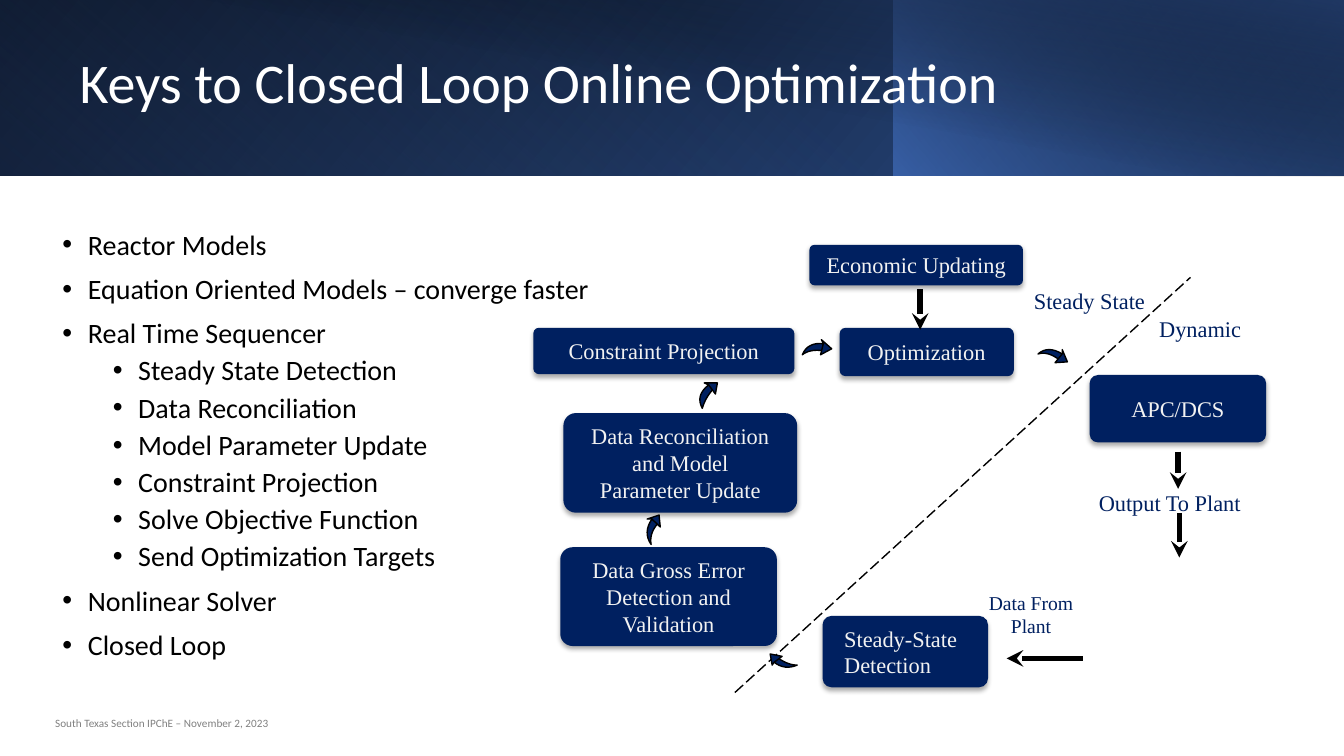
from lxml.etree import SubElement
from pptx import Presentation
from pptx.dml.color import RGBColor
from pptx.enum.dml import MSO_LINE
from pptx.enum.shapes import MSO_CONNECTOR, MSO_SHAPE
from pptx.enum.text import MSO_ANCHOR, MSO_AUTO_SIZE, PP_ALIGN
from pptx.oxml.ns import qn
from pptx.util import Cm, Pt

BLACK = RGBColor(0x00, 0x00, 0x00)
WHITE = RGBColor(0xFF, 0xFF, 0xFF)
GRAY = RGBColor(0x80, 0x80, 0x80)
PALE = RGBColor(0xF2, 0xF2, 0xF2)
NAVY = RGBColor(0x00, 0x20, 0x60)
DARK_BLUE = RGBColor(0x20, 0x38, 0x64)
MID_BLUE = RGBColor(0x2F, 0x55, 0x97)
BLUE = RGBColor(0x44, 0x72, 0xC4)

SANS, SERIF = "Calibri", "Times New Roman"

# Header layers: place, flipped, rotation, angle, stops of (position, colour, opacity)
HEADER_LAYERS = [
    ((0, 0, 33.87, 4.42), True, 0, 140, [(0, BLACK, 100), (100, MID_BLUE, 100)]),
    ((0, 0, 22.55, 4.42), True, 180, 230, [(20, BLUE, 0), (100, DARK_BLUE, 55)]),
    ((22.53, 0, 11.33, 4.42), True, 0, 220, [(0, BLUE, 66), (100, BLACK, 30)]),
    ((1.27, 0, 32.6, 4.45), False, 0, 280, [(50, BLACK, 0), (99, DARK_BLUE, 52)]),
]

KEYS = [
    (0, "Reactor Models"),
    (0, "Equation Oriented Models – converge faster"),
    (0, "Real Time Sequencer"),
    (1, "Steady State Detection"),
    (1, "Data Reconciliation"),
    (1, "Model Parameter Update"),
    (1, "Constraint Projection"),
    (1, "Solve Objective Function"),
    (1, "Send Optimization Targets"),
    (0, "Nonlinear Solver"),
    (0, "Closed Loop"),
]

STEPS = [
    ("APC/DCS", (27.46, 9.45, 4.45, 1.7), PP_ALIGN.CENTER),
    ("Economic Updating", (20.4, 6.17, 5.38, 1.02), PP_ALIGN.CENTER),
    ("Optimization", (21.16, 8.26, 4.39, 1.22), PP_ALIGN.CENTER),
    ("Constraint Projection", (13.44, 8.26, 6.58, 1.17), PP_ALIGN.CENTER),
    ("Data Reconciliation\nand Model\nParameter Update", (14.2, 10.41, 5.89, 2.51), PP_ALIGN.CENTER),
    ("Data Gross Error\nDetection and\nValidation", (14.12, 13.79, 5.46, 2.49), PP_ALIGN.CENTER),
    ("Steady-State\nDetection", (20.73, 15.52, 4.17, 1.8), PP_ALIGN.LEFT),
]

LABELS = [
    ("Output To Plant", (27.46, 12.22, 4.04, 0.89), 16),
    ("Dynamic", (28.96, 7.85, 2.57, 0.89), 16),
    ("Steady State", (25.83, 7.14, 3.25, 0.89), 16),
    ("Data From\nPlant", (24.64, 14.78, 2.69, 1.4), 14),
]

STRAIGHT_ARROWS = [
    ((29.72, 12.93), (29.72, 14.05)),
    ((29.69, 11.38), (29.69, 12.32)),
    ((27.28, 16.59), (25.37, 16.59)),
    ((23.19, 7.29), (23.19, 8.31)),
]

# Curved arrows: tail, outer middle, outer neck, inner neck, inner middle; barb, tip, barb
CURVED_ARROWS = [
    ([(16.41, 13.72), (16.31, 13.41), (16.43, 13.08), (16.59, 13.18), (16.43, 13.44)],
     [(16.31, 13.08), (16.61, 12.98), (16.64, 13.28)]),
    ([(17.7, 10.29), (17.65, 9.98), (17.86, 9.7), (17.98, 9.8), (17.81, 10.03)],
     [(17.75, 9.65), (18.08, 9.65), (18.03, 9.93)]),
    ([(20.22, 8.94), (20.42, 8.71), (20.75, 8.66), (20.75, 8.84), (20.45, 8.84)],
     [(20.7, 8.56), (20.96, 8.79), (20.68, 8.94)]),
    ([(26.16, 8.92), (26.44, 8.81), (26.77, 8.92), (26.7, 9.07), (26.42, 8.92)],
     [(26.77, 8.81), (26.9, 9.12), (26.59, 9.14)]),
    ([(20.09, 16.76), (19.79, 16.81), (19.51, 16.69), (19.58, 16.56), (19.84, 16.71)],
     [(19.46, 16.76), (19.41, 16.48), (19.71, 16.54)]),
]


def lengths(values):
    return [Cm(value) for value in values]


def place(shape, box):
    shape.left, shape.top, shape.width, shape.height = lengths(box)


def format_text(frame, font, size, color, align=PP_ALIGN.LEFT, spacing=None):
    for paragraph in frame.paragraphs:
        paragraph.alignment = align
        paragraph.line_spacing = spacing
        for run in paragraph.runs:
            run.font.name, run.font.size = font, Pt(size)
            run.font.color.rgb = color


def set_insets(frame, side, end):
    frame.margin_left = frame.margin_right = Cm(side)
    frame.margin_top = frame.margin_bottom = Cm(end)


def add_header_layer(slide, box, flipped, rotation, angle, stops):
    layer = slide.shapes.add_shape(MSO_SHAPE.RECTANGLE, *lengths(box))
    layer.shadow.inherit = False
    layer.line.fill.background()
    layer.rotation = rotation
    properties = layer.element.spPr
    if flipped:
        properties.find(qn("a:xfrm")).set("flipH", "1")
    gradient = SubElement(properties, qn("a:gradFill"), rotWithShape="1")
    properties.find(qn("a:prstGeom")).addnext(gradient)
    stop_list = SubElement(gradient, qn("a:gsLst"))
    for position, color, opacity in stops:
        stop = SubElement(stop_list, qn("a:gs"), pos=str(position * 1000))
        tint = SubElement(stop, qn("a:srgbClr"), val=str(color))
        SubElement(tint, qn("a:alpha"), val=str(opacity * 1000))
    SubElement(gradient, qn("a:lin"), ang=str(angle * 60000), scaled="0")
    # Keep the header behind the title
    slide.shapes.title.element.addprevious(layer.element)


def fill_title(title, text):
    place(title, (1.75, 0.71, 27.48, 2.87))
    title.text_frame.text = text
    title.text_frame.auto_size = MSO_AUTO_SIZE.NONE
    title.text_frame.vertical_anchor = MSO_ANCHOR.MIDDLE
    format_text(title.text_frame, SANS, 40, WHITE, spacing=0.9)


def fill_key_list(body, keys):
    place(body, (1.32, 5.69, 27, 12.04))
    frame = body.text_frame
    frame.text = "\n".join(text for _, text in keys)
    frame.auto_size = MSO_AUTO_SIZE.NONE
    frame.vertical_anchor = MSO_ANCHOR.TOP
    format_text(frame, SANS, 20, BLACK, spacing=0.9)
    for paragraph, (level, _) in zip(frame.paragraphs, keys):
        paragraph.level = level
        paragraph.space_before = Pt(5 if level else 10)
        properties = paragraph._p.get_or_add_pPr()
        properties.set("marL", str(Cm(0.64 + 1.27 * level)))
        properties.set("indent", str(Cm(-0.64)))
        SubElement(properties, qn("a:buFont"), typeface="Arial")
        SubElement(properties, qn("a:buChar"), char="•")


def add_step(slide, text, box, align):
    step = slide.shapes.add_shape(MSO_SHAPE.ROUNDED_RECTANGLE, *lengths(box))
    step.adjustments[0] = 0.125
    step.fill.solid()
    step.fill.fore_color.rgb = NAVY
    step.line.fill.background()
    step.shadow.inherit = False
    shadow = SubElement(step.element.spPr.find(qn("a:effectLst")), qn("a:outerShdw"),
                        blurRad=str(Pt(3.5)), dist=str(Pt(2.2)), dir="5400000", rotWithShape="0")
    tint = SubElement(shadow, qn("a:srgbClr"), val=str(BLACK))
    SubElement(tint, qn("a:alpha"), val="32000")
    frame = step.text_frame
    frame.text = text
    frame.vertical_anchor = MSO_ANCHOR.MIDDLE
    set_insets(frame, 0.48 if align == PP_ALIGN.LEFT else 0.2, 0.1)
    format_text(frame, SERIF, 16, PALE, align)


def add_label(slide, text, box, size):
    frame = slide.shapes.add_textbox(*lengths(box)).text_frame
    frame.text = text
    frame.word_wrap = False
    set_insets(frame, 0.2, 0.1)
    format_text(frame, SERIF, size, NAVY, PP_ALIGN.CENTER)


def add_line(slide, start, end, width):
    line = slide.shapes.add_connector(MSO_CONNECTOR.STRAIGHT, *lengths(start + end))
    line.line.color.rgb = BLACK
    line.line.width = Pt(width)
    SubElement(line.element.spPr, qn("a:effectLst"))
    return line.line


def add_straight_arrow(slide, start, end):
    line = add_line(slide, start, end, 4)
    SubElement(line._get_or_add_ln(), qn("a:tailEnd"), type="stealth")


def arc(start, middle, end, steps=8):
    """Points of the parabola that runs through three points."""
    points = []
    for t in (step / steps for step in range(steps + 1)):
        weights = (1 - t) * (1 - 2 * t), 4 * t * (1 - t), t * (2 * t - 1)
        points.append(tuple(sum(w * v for w, v in zip(weights, axis))
                            for axis in zip(start, middle, end)))
    return points


def add_curved_arrow(slide, bend, head):
    tail, outer_middle, outer_neck, inner_neck, inner_middle = bend
    crescent = arc(tail, outer_middle, outer_neck) + arc(inner_neck, inner_middle, tail)
    arrow = slide.shapes.add_group_shape()
    for outline in (crescent, [outer_neck] + head):
        points = [lengths(point) for point in outline]
        builder = arrow.shapes.build_freeform(*points[0])
        builder.add_line_segments(points[1:], close=True)
        part = builder.convert_to_shape()
        part.shadow.inherit = False
        part.fill.solid()
        part.fill.fore_color.rgb = NAVY
        part.line.color.rgb = BLACK
        part.line.width = Pt(1)


def add_footer(slide, text):
    frame = slide.shapes.add_textbox(*lengths((1.14, 17.73, 6.68, 1.02))).text_frame
    frame.text = text
    frame.word_wrap = True
    frame.vertical_anchor = MSO_ANCHOR.MIDDLE
    format_text(frame, SANS, 8, GRAY, spacing=0.9)
    frame.paragraphs[0].space_after = Pt(6)


def main():
    deck = Presentation()
    deck.slide_width, deck.slide_height = Cm(33.87), Cm(19.05)
    slide = deck.slides.add_slide(deck.slide_layouts[1])

    # Header, list and footer
    for layer in HEADER_LAYERS:
        add_header_layer(slide, *layer)
    fill_title(slide.shapes.title, "Keys to Closed Loop Online Optimization")
    fill_key_list(slide.placeholders[1], KEYS)
    add_footer(slide, "South Texas Section IPChE – November 2, 2023")

    # Optimization loop
    for step in STEPS:
        add_step(slide, *step)
    for label in LABELS:
        add_label(slide, *label)
    divider = add_line(slide, (18.52, 17.45), (30, 6.99), 1)
    divider.dash_style = MSO_LINE.LONG_DASH
    for ends in STRAIGHT_ARROWS:
        add_straight_arrow(slide, *ends)
    for outline in CURVED_ARROWS:
        add_curved_arrow(slide, *outline)

    deck.save("out.pptx")


if __name__ == "__main__":
    main()
